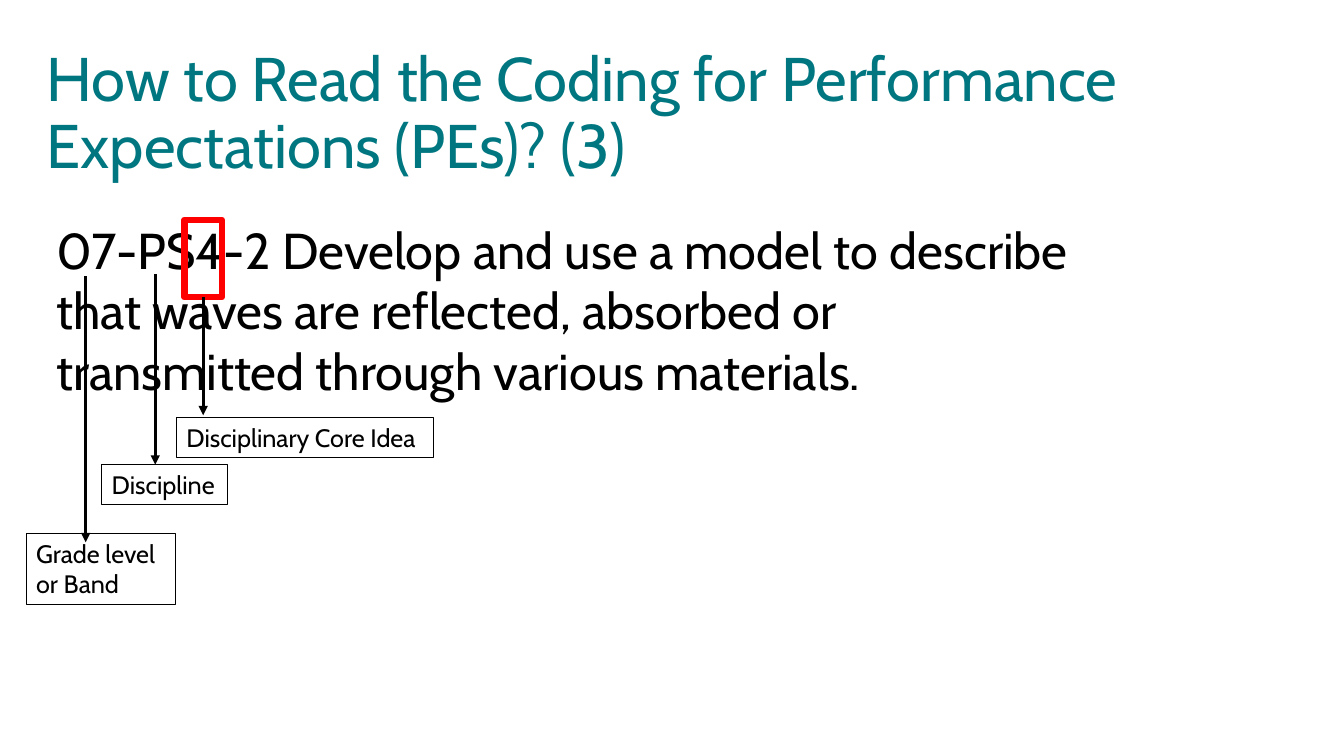
"""Build the slide that explains the coding of performance expectations."""
from lxml import etree
from pptx import Presentation
from pptx.dml.color import RGBColor
from pptx.enum.shapes import MSO_CONNECTOR, MSO_SHAPE
from pptx.enum.text import MSO_ANCHOR, MSO_AUTO_SIZE, PP_ALIGN
from pptx.oxml.ns import qn
from pptx.util import Inches, Pt

RECTANGLE = MSO_SHAPE.RECTANGLE
STRAIGHT = MSO_CONNECTOR.STRAIGHT
TOP, MIDDLE = MSO_ANCHOR.TOP, MSO_ANCHOR.MIDDLE
LEFT = PP_ALIGN.LEFT
NO_FIT = MSO_AUTO_SIZE.NONE
BOTTOM_SIDE = 2
TITLE_ONLY = 5

FONT = "Cabin"
TEAL, BLACK, RED = "007780", "000000", "FF0000"

TITLE = "How to Read the Coding for Performance Expectations (PEs)? (3)"
TITLE_AREA = (0.36, 0.67, 10.86, 0.94)
EXPECTATION = (
    "07-PS4-2 Develop and use a model to describe that waves are reflected, "
    "absorbed or transmitted through various materials."
)
EXPECTATION_AREA = (0.46, 2.12, 10.43, 1.92)
HIGHLIGHT_AREA = (1.83, 2.18, 0.37, 0.77)

CODE_PARTS = [
    {"label": "Grade level or Band", "area": (0.26, 5.29, 1.48, 0.71),
     "arrow": (0.85, 2.74, 5.38), "highlighted": False},
    {"label": "Discipline", "area": (1.01, 4.61, 1.25, 0.4),
     "arrow": (1.54, 2.72, 4.61), "highlighted": False},
    {"label": "Disciplinary Core Idea", "area": (1.75, 4.14, 2.55, 0.4),
     "arrow": (2.01, 2.95, 4.12), "highlighted": True},
]


def color(value):
    return RGBColor.from_string(value)


def lengths(values):
    return [Inches(value) for value in values]


def write(box, text, size, shade, anchor=TOP, spacing=1.0):
    frame = box.text_frame
    frame.word_wrap = True
    frame.auto_size = NO_FIT
    frame.vertical_anchor = anchor
    para = frame.paragraphs[0]
    para.alignment = LEFT
    para.line_spacing = spacing
    span = para.add_run()
    span.text = text
    span.font.name = FONT
    span.font.size = Pt(size)
    span.font.color.rgb = color(shade)


def outline(shape, shade, width):
    shape.line.color.rgb = color(shade)
    shape.line.width = Pt(width)


def add_frame(page, area, shade, width):
    box = page.shapes.add_shape(RECTANGLE, *lengths(area))
    box.shadow.inherit = False
    box.fill.background()
    outline(box, shade, width)
    return box


def add_arrow(page, x, start, end):
    arrow = page.shapes.add_connector(STRAIGHT, *lengths((x, start, x, end)))
    outline(arrow, BLACK, 2.25)
    etree.SubElement(arrow.line._get_or_add_ln(), qn("a:tailEnd"), type="triangle")
    etree.SubElement(arrow._element.spPr, qn("a:effectLst"))
    return arrow


def main():
    deck = Presentation()
    deck.slide_width, deck.slide_height = lengths((13.33, 7.5))
    page = deck.slides.add_slide(deck.slide_layouts[TITLE_ONLY])

    title = page.shapes.title
    title.left, title.top, title.width, title.height = lengths(TITLE_AREA)
    write(title, TITLE, 44, TEAL, MIDDLE, 0.9)

    expectation = page.shapes.add_textbox(*lengths(EXPECTATION_AREA))
    write(expectation, EXPECTATION, 36, BLACK)
    highlight = add_frame(page, HIGHLIGHT_AREA, RED, 4.5)

    for part in CODE_PARTS:
        arrow = add_arrow(page, *part["arrow"])
        if part["highlighted"]:
            arrow.begin_connect(highlight, BOTTOM_SIDE)
            arrow.end_x = arrow.begin_x
        label = add_frame(page, part["area"], BLACK, 0.75)
        write(label, part["label"], 18, BLACK)

    deck.save("out.pptx")


if __name__ == "__main__":
    main()
